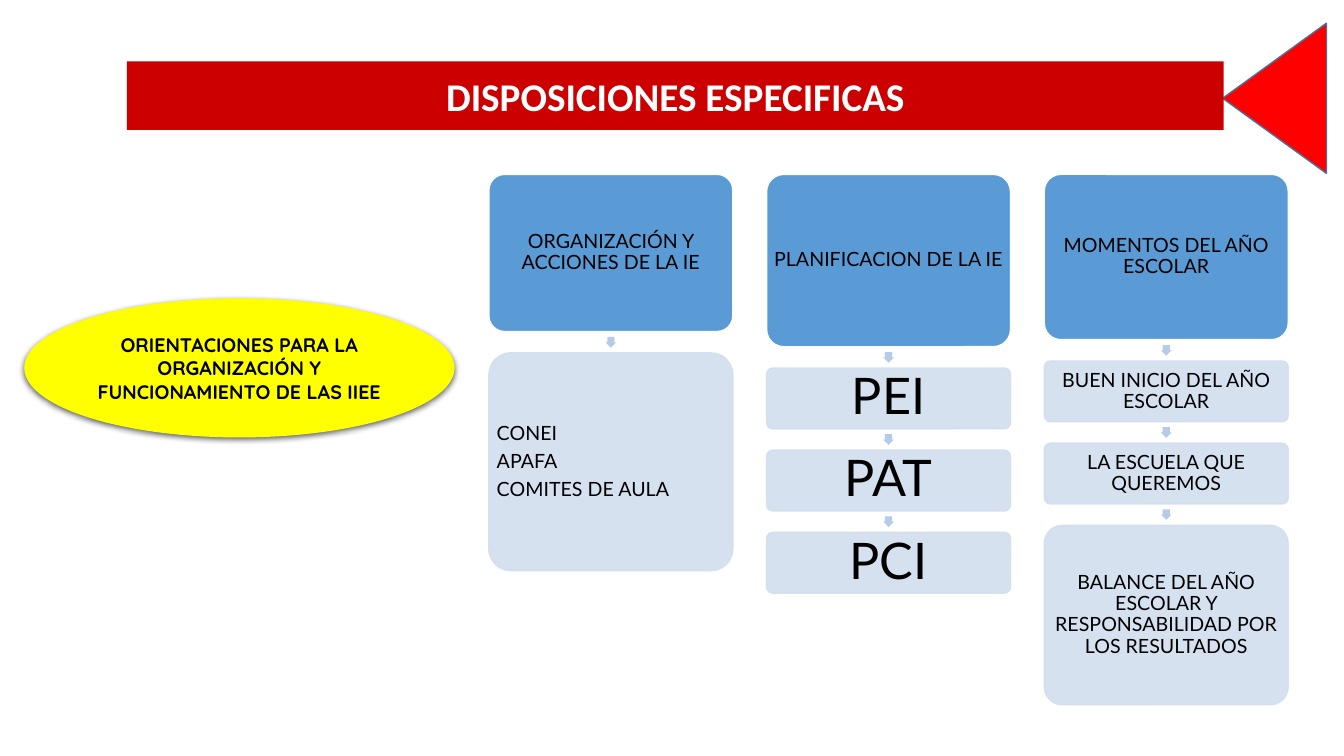
from dataclasses import dataclass
from typing import Optional

from lxml.etree import SubElement
from pptx import Presentation
from pptx.dml.color import RGBColor
from pptx.enum.shapes import MSO_SHAPE
from pptx.enum.text import MSO_ANCHOR, PP_ALIGN
from pptx.oxml.ns import qn
from pptx.util import Inches, Pt

COLOURS = {
    "banner": "CC0000", "pointer": "FF0000", "pointer_edge": "43739E",
    "topic": "FFFF00", "heading": "5B9BD5", "step": "D2DEEF",
    "arrow": "B5CBE7", "white": "FFFFFF", "black": "000000",
}
SLIDE_WIDTH, SLIDE_HEIGHT = Inches(13.333), Inches(7.5)
GRID_COLUMNS, GRID_ROWS = 160, 90
FIRST_LEFT, BRANCH_TOP = 58.2, 20.76
BRANCH_PITCH, BRANCH_WIDTH = 33.06, 29.04
GAP, ARROW_SIZE = 2.54, 1.27
STEP_HEIGHT = 7.24
OPACITY = 90


@dataclass
class Place:
    left: float
    top: float
    width: float
    height: float


@dataclass
class Style:
    font: str
    size: int
    colour: str = "black"
    bold: bool = False
    align: PP_ALIGN = PP_ALIGN.CENTER
    inset_x: float = 0.18
    inset_y: float = 0.24
    line_spacing: float = 1.0
    after_share: float = 0.0


@dataclass
class Step:
    lines: list[str]
    height: float = STEP_HEIGHT
    size: int = 14
    align: PP_ALIGN = PP_ALIGN.CENTER


@dataclass
class Branch:
    heading: str
    heading_height: float
    steps: list[Step]


BRANCHES = [
    Branch("ORGANIZACIÓN Y ACCIONES DE LA IE", 18.72, [
        Step(["CONEI", "APAFA", "COMITES DE AULA"], 25.92, align=PP_ALIGN.JUSTIFY),
    ]),
    Branch("PLANIFICACION DE LA IE", 20.52, [
        Step([plan], size=36) for plan in ("PEI", "PAT", "PCI")
    ]),
    Branch("MOMENTOS DEL AÑO ESCOLAR", 19.68, [
        Step(["BUEN INICIO DEL AÑO ESCOLAR"]),
        Step(["LA ESCUELA QUE QUEREMOS"]),
        Step(["BALANCE DEL AÑO ESCOLAR Y RESPONSABILIDAD POR LOS RESULTADOS"], 21.36),
    ]),
]


def across(columns: float) -> int:
    """Convert grid columns to a slide length."""
    return round(SLIDE_WIDTH * columns / GRID_COLUMNS)


def down(rows: float) -> int:
    """Convert grid rows to a slide length."""
    return round(SLIDE_HEIGHT * rows / GRID_ROWS)


def rgb(colour: str) -> RGBColor:
    """Look up a named colour."""
    return RGBColor.from_string(COLOURS[colour])


def set_opacity(element, percent: int) -> None:
    """Make every colour inside an element partly transparent."""
    for colour in element.iter(qn("a:srgbClr")):
        SubElement(colour, qn("a:alpha")).set("val", str(percent * 1000))


def draw(slide, kind: MSO_SHAPE, place: Place, fill: str, edge: Optional[str] = None):
    """Draw a flat preset shape on the grid."""
    figure = slide.shapes.add_shape(
        kind, across(place.left), down(place.top), across(place.width), down(place.height)
    )
    figure.shadow.inherit = False
    figure.fill.solid()
    figure.fill.fore_color.rgb = rgb(fill)
    if edge:
        figure.line.color.rgb = rgb(edge)
        figure.line.width = Pt(1)
    else:
        figure.line.fill.background()
    return figure


def write(figure, lines: list[str], style: Style) -> None:
    """Fill a shape with one paragraph per line."""
    frame = figure.text_frame
    frame.word_wrap = True
    frame.vertical_anchor = MSO_ANCHOR.MIDDLE
    frame.margin_left = frame.margin_right = across(style.inset_x)
    frame.margin_top = frame.margin_bottom = down(style.inset_y)
    for index, line in enumerate(lines):
        paragraph = frame.add_paragraph() if index else frame.paragraphs[0]
        paragraph.alignment = style.align
        paragraph.line_spacing = style.line_spacing
        paragraph.space_after = Pt(style.size * style.after_share)
        run = paragraph.add_run()
        run.text = line
        run.font.name = style.font
        run.font.size = Pt(style.size)
        run.font.bold = style.bold
        run.font.color.rgb = rgb(style.colour)


def draw_box(slide, place: Place, fill: str, edge: str, step: Step):
    """Draw a rounded box of a branch with its text."""
    box = draw(slide, MSO_SHAPE.ROUNDED_RECTANGLE, place, fill, edge)
    box.adjustments[0] = 0.1
    write(box, step.lines, Style(
        "Lato", step.size, align=step.align, line_spacing=0.9, after_share=0.35
    ))
    return box


def draw_branch(slide, left: float, branch: Branch) -> None:
    """Draw a heading and the steps hanging below it."""
    heading = Place(left, BRANCH_TOP, BRANCH_WIDTH, branch.heading_height)
    draw_box(slide, heading, "heading", "white", Step([branch.heading]))
    bottom = BRANCH_TOP + branch.heading_height
    for step in branch.steps:
        arrow = draw(slide, MSO_SHAPE.RIGHT_ARROW, Place(
            left + (BRANCH_WIDTH - ARROW_SIZE) / 2, bottom + (GAP - ARROW_SIZE) / 2,
            ARROW_SIZE, ARROW_SIZE,
        ), "arrow")
        arrow.rotation = 90
        arrow.adjustments[0] = 0.67
        place = Place(left, bottom + GAP, BRANCH_WIDTH, step.height)
        box = draw_box(slide, place, "step", "step", step)
        set_opacity(box.fill._xPr, OPACITY)
        bottom += GAP + step.height


def draw_topic(slide) -> None:
    """Draw the shadowed ellipse that names the topic."""
    topic = draw(slide, MSO_SHAPE.OVAL, Place(2.88, 35.52, 51.24, 16.56), "topic")
    effects = topic._element.spPr.find(qn("a:effectLst"))
    shadow = SubElement(effects, qn("a:outerShdw"))
    for key, value in (("blurRad", Pt(4.5)), ("dist", Pt(1.5)), ("dir", 5400000)):
        shadow.set(key, str(int(value)))
    shadow.set("rotWithShape", "0")
    SubElement(shadow, qn("a:srgbClr")).set("val", COLOURS["black"])
    set_opacity(shadow, 63)
    write(topic, ["ORIENTACIONES PARA LA ORGANIZACIÓN Y FUNCIONAMIENTO DE LAS IIEE"],
          Style("Quicksand", 14, bold=True, inset_x=0, inset_y=0.6))


def main() -> None:
    """Build and save the slide."""
    presentation = Presentation()
    presentation.slide_width, presentation.slide_height = SLIDE_WIDTH, SLIDE_HEIGHT
    slide = presentation.slides.add_slide(presentation.slide_layouts[6])
    pointer = draw(slide, MSO_SHAPE.ISOSCELES_TRIANGLE,
                   Place(142.8, 5.52, 17.88, 12.36), "pointer", "pointer_edge")
    pointer.rotation = 270
    banner = draw(slide, MSO_SHAPE.RECTANGLE, Place(15.12, 7.32, 130.56, 8.16), "banner")
    write(banner, ["DISPOSICIONES ESPECIFICAS"],
          Style("Calibri", 28, "white", True, inset_x=1.2, inset_y=0.6))
    draw_topic(slide)
    for index, branch in enumerate(BRANCHES):
        draw_branch(slide, FIRST_LEFT + index * BRANCH_PITCH, branch)
    presentation.save("out.pptx")


if __name__ == "__main__":
    main()
